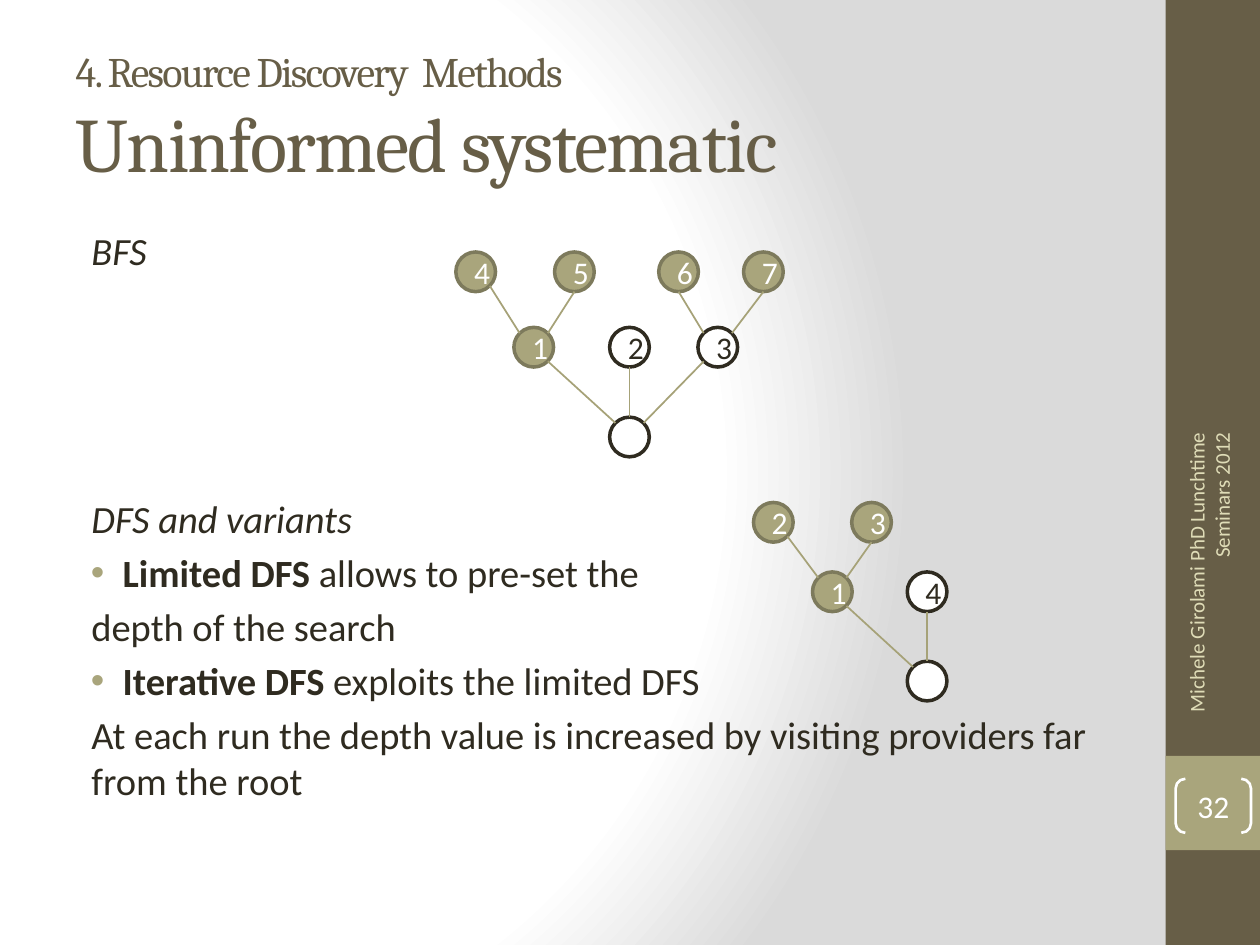
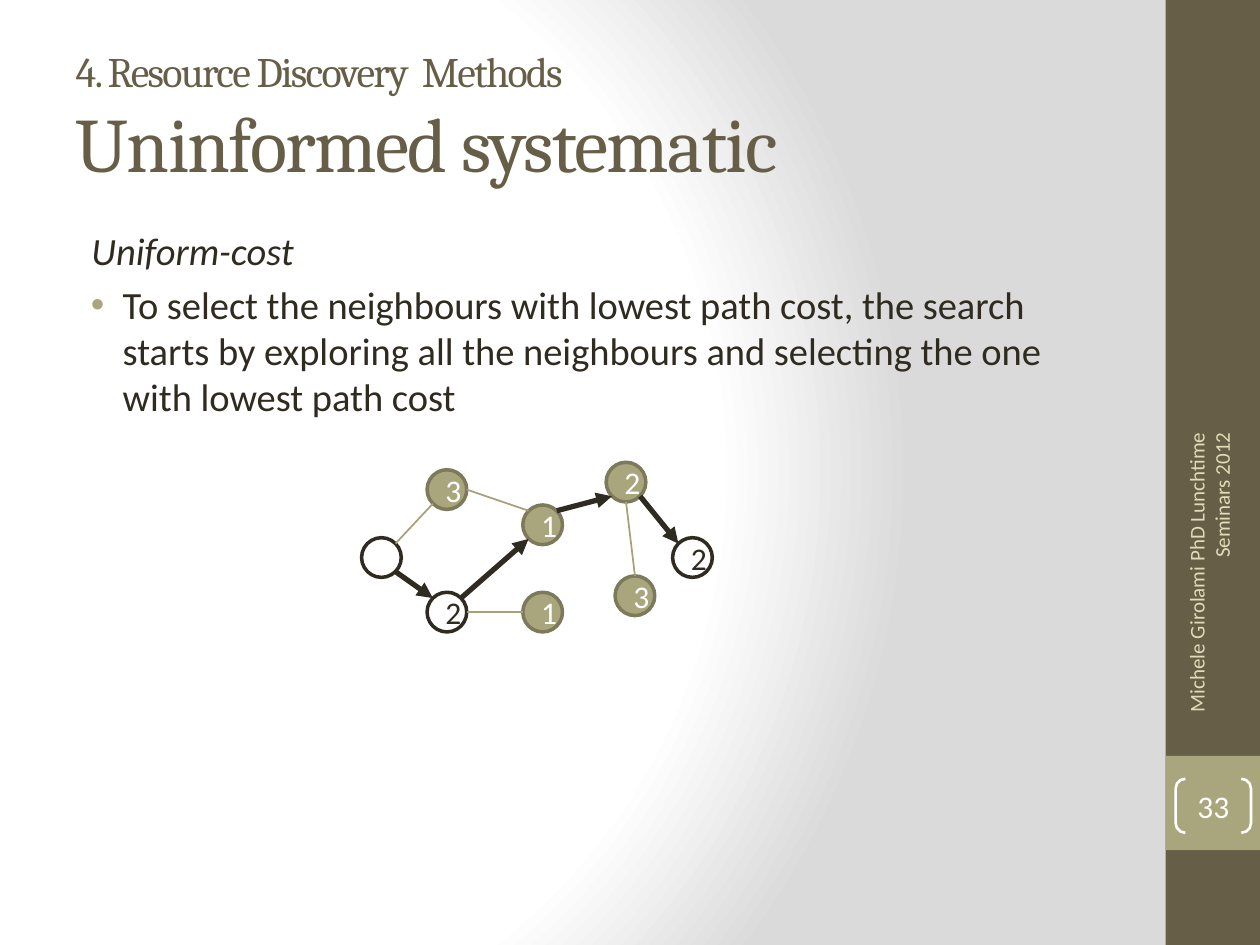
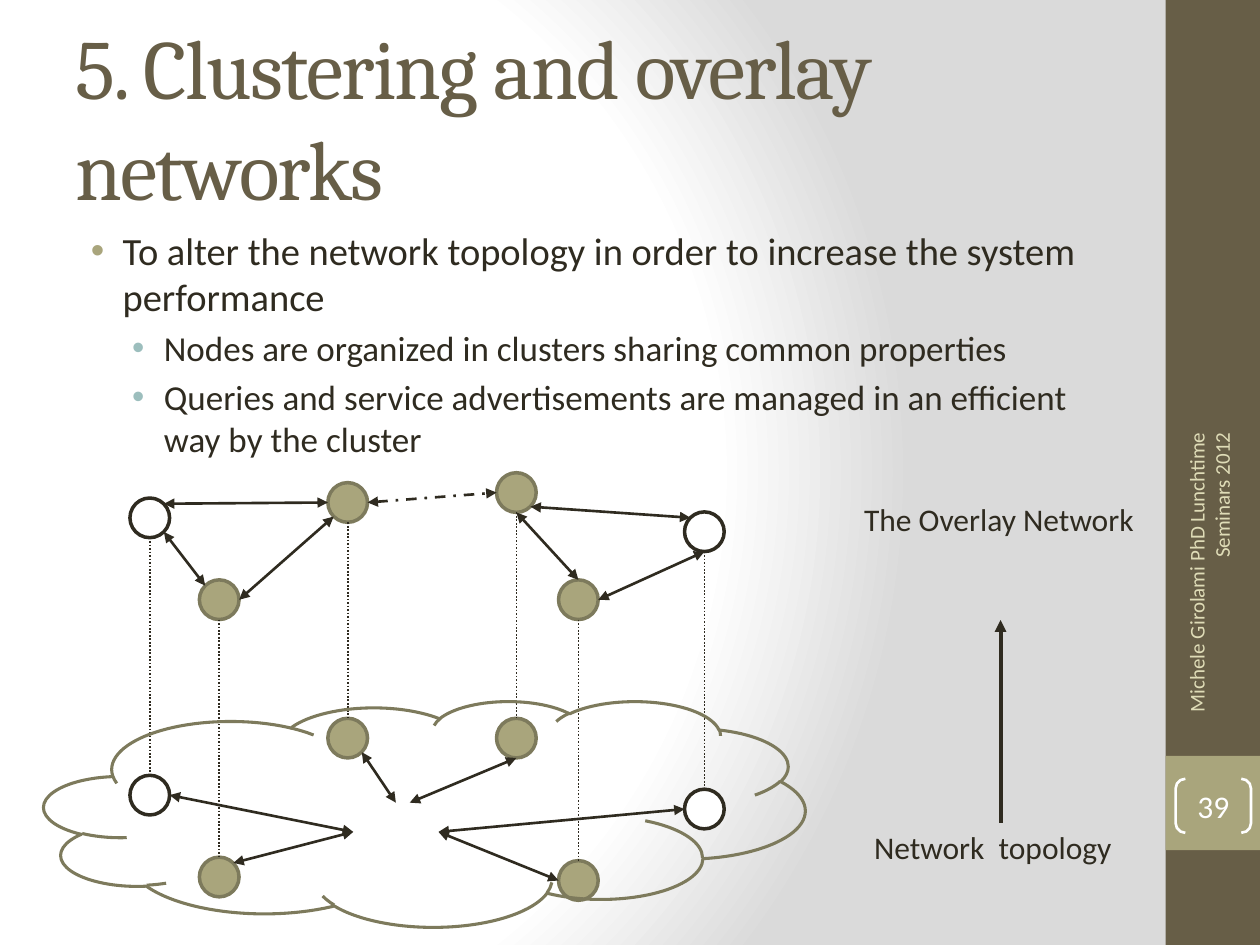
from lxml import etree
from pptx import Presentation
from pptx.dml.color import RGBColor
from pptx.enum import dml, shapes, text
from pptx.oxml import parse_xml
from pptx.oxml.ns import nsdecls, qn
from pptx.util import Cm, Pt

COLORS = {
    "band": "675E47", "accent": "A9A57C", "accent_edge": "7D7A5C", "link": "A6A278",
    "ink": "2F2B20", "paper": "FFFFFF", "shade": "DADADA", "footer": "DFDCB7",
    "sub_bullet": "9CBEBD",
}
HEADING_FONT, BODY_FONT = "Cambria", "Calibri"
FOOTER = "Michele Girolami PhD Lunchtime Seminars 2012"
NODE = 0.8  # node diameter in cm
DIAGONAL = 0.71
SIDES = {
    "N": (0, -1), "E": (1, 0), "S": (0, 1), "W": (-1, 0),
    "NE": (DIAGONAL, -DIAGONAL), "SE": (DIAGONAL, DIAGONAL),
    "SW": (-DIAGONAL, DIAGONAL), "NW": (-DIAGONAL, -DIAGONAL),
}
LINK = {"color": "link", "width": 1}
ROUTE = {"color": "ink", "width": 3, "tail": True}
EXCHANGE = {"color": "ink", "width": 1.5, "head": True, "tail": True}
PROJECTION = {"color": "ink", "width": 1, "dash": dml.MSO_LINE.ROUND_DOT}
BRIDGE = {**EXCHANGE, "dash": dml.MSO_LINE.DASH_DOT}


def rgb(name):
    return RGBColor.from_string(COLORS[name])


def box_cm(box):
    return [Cm(length) for length in box]


def style_run(run, size, color, font=BODY_FONT):
    run.font.size, run.font.name = Pt(size), font
    run.font.color.rgb = rgb(color)


def set_line_text(shape, content, size, color, align):
    paragraph = shape.text_frame.paragraphs[0]
    paragraph.text = content
    paragraph.alignment = align
    style_run(paragraph.runs[0], size, color)


def add_shape(slide, kind, box, fill=None, edge=None, width=1):
    shape = slide.shapes.add_shape(kind, *box_cm(box))
    shape.shadow.inherit = False
    if fill:
        shape.fill.solid()
        shape.fill.fore_color.rgb = rgb(fill)
    else:
        shape.fill.background()
    if edge:
        shape.line.color.rgb = rgb(edge)
        shape.line.width = Pt(width)
    else:
        shape.line.fill.background()
    return shape


def add_line(slide, start, end, color, width, head=False, tail=False, dash=None):
    connector = slide.shapes.add_connector(
        shapes.MSO_CONNECTOR.STRAIGHT, *box_cm((*start, *end)))
    connector.line.color.rgb = rgb(color)
    connector.line.width = Pt(width)
    if dash:
        connector.line.dash_style = dash
    properties = connector._element.spPr
    outline = properties.find(qn("a:ln"))
    for tag, wanted in (("a:headEnd", head), ("a:tailEnd", tail)):
        if wanted:
            etree.SubElement(outline, qn(tag), type="triangle")
    etree.SubElement(properties, qn("a:effectLst"))


def set_background(master):
    """Give every slide the radial white-to-grey background."""
    master.background.fill.solid()
    properties = master._element.cSld.find(qn("p:bg")).find(qn("p:bgPr"))
    stops = "".join(
        f'<a:gs pos="{position}000"><a:srgbClr val="{COLORS[name]}"/></a:gs>'
        for position, name in ((0, "paper"), (75, "paper"), (100, "shade")))
    gradient = parse_xml(
        f'<a:gradFill {nsdecls("a")} rotWithShape="1"><a:gsLst>{stops}</a:gsLst>'
        '<a:path path="circle"><a:fillToRect l="20000" t="50000" r="100000" b="50000"/>'
        '</a:path></a:gradFill>')
    properties.replace(properties.find(qn("a:solidFill")), gradient)


def add_side_band(slide, number, left=23.5, width=1.9):
    rectangle = shapes.MSO_SHAPE.RECTANGLE
    add_shape(slide, rectangle, (left, 0, width, 19.05), "band")
    add_shape(slide, rectangle, (left, 15.24, width, width), "accent")

    footer = slide.shapes.add_textbox(*box_cm((left - 2.42, 11.25, 6.58, 1.02)))
    footer.rotation = 270
    footer.text_frame.word_wrap = True
    footer.text_frame.vertical_anchor = text.MSO_ANCHOR.MIDDLE
    set_line_text(footer, FOOTER, 12, "footer", text.PP_ALIGN.RIGHT)

    bracket = add_shape(slide, shapes.MSO_SHAPE.DOUBLE_BRACKET,
                        (left + 0.2, 15.7, 1.52, 1.09), edge="paper", width=1.5)
    bracket.adjustments[0] = 0.18
    frame = bracket.text_frame
    frame.margin_left = frame.margin_top = frame.margin_right = frame.margin_bottom = 0
    set_line_text(bracket, str(number), 18, "paper", text.PP_ALIGN.CENTER)


def place_placeholder(placeholder, box, anchor):
    placeholder.left, placeholder.top, placeholder.width, placeholder.height = box_cm(box)
    frame = placeholder.text_frame
    frame.auto_size = text.MSO_AUTO_SIZE.NONE
    frame.vertical_anchor = anchor
    return frame


def fill_title(slide, lines):
    """Write the title from (text, size) lines."""
    frame = place_placeholder(slide.shapes.title, (1.27, 0.76, 21.16, 3.18),
                              text.MSO_ANCHOR.MIDDLE)
    frame.text = "\n".join(line for line, _ in lines)
    for paragraph, (_, size) in zip(frame.paragraphs, lines):
        paragraph.alignment = text.PP_ALIGN.LEFT
        run = paragraph.runs[0]
        style_run(run, size, "band", HEADING_FONT)
        run._r.get_or_add_rPr().set("spc", "-100")


def set_bullet(paragraph, style):
    indent, hanging, color = {
        "plain": (0.32, 0, None),
        "italic": (0.32, 0, None),
        "bullet": (0.95, -0.64, "accent"),
        "sub": (1.78, -0.64, "sub_bullet"),
    }[style]
    properties = paragraph._p.get_or_add_pPr()
    properties.set("marL", str(Cm(indent)))
    properties.set("indent", str(Cm(hanging)))
    if not color:
        etree.SubElement(properties, qn("a:buNone"))
        return
    bullet_color = etree.SubElement(properties, qn("a:buClr"))
    etree.SubElement(bullet_color, qn("a:srgbClr"), val=COLORS[color])
    etree.SubElement(properties, qn("a:buFont"), typeface="Arial")
    etree.SubElement(properties, qn("a:buChar"), char="•")


def fill_body(slide, items):
    """Write (style, bold lead, rest, optional space before) items."""
    frame = place_placeholder(slide.placeholders[1], (1.27, 4.45, 21.16, 13.33),
                              text.MSO_ANCHOR.TOP)
    for index, (style, lead, rest, *space) in enumerate(items):
        paragraph = frame.paragraphs[0] if index == 0 else frame.add_paragraph()
        size = 20 if style == "sub" else 22
        paragraph.level = int(style == "sub")
        paragraph.space_before = Pt(space[0] if space else size * 0.2)
        set_bullet(paragraph, style)
        for content, bold in ((lead, True), (rest, False)):
            if content:
                run = paragraph.add_run()
                run.text = content
                style_run(run, size, "ink")
                run.font.bold = bold
                run.font.italic = style == "italic"


def add_nodes(slide, origin, nodes):
    """Draw name: (x, y, label, filled) circles and return their centres."""
    centres = {}
    for name, (x, y, label, filled) in nodes.items():
        left, top = origin[0] + x, origin[1] + y
        fill, edge, ink = (("accent", "accent_edge", "paper") if filled
                           else ("paper", "ink", "ink"))
        node = add_shape(slide, shapes.MSO_SHAPE.OVAL, (left, top, NODE, NODE),
                         fill, edge, 2)
        if label:
            set_line_text(node, label, 18, ink, text.PP_ALIGN.CENTER)
        centres[name] = (left + NODE / 2, top + NODE / 2)
    return centres


def rim(centre, side):
    return tuple(c + NODE / 2 * step for c, step in zip(centre, SIDES[side]))


def add_edges(slide, centres, edges, style):
    for start, start_side, end, end_side in edges:
        add_line(slide, rim(centres[start], start_side), rim(centres[end], end_side), **style)


def add_graph(slide, origin, nodes, edges):
    add_edges(slide, add_nodes(slide, origin, nodes), edges, LINK)


def add_breadth_first_tree(slide, origin):
    leaf_y, child_y = 0, 1.52
    nodes = {
        "1": (1.17, child_y, "1", True), "root": (3.1, 3.33, "", False),
        "4": (0, leaf_y, "4", True), "3": (4.88, child_y, "3", False),
        "2": (3.1, child_y, "2", False), "5": (1.99, leaf_y, "5", True),
        "6": (4.09, leaf_y, "6", True), "7": (5.8, leaf_y, "7", True),
    }
    add_graph(slide, origin, nodes, [
        ("1", "SE", "root", "NW"), ("2", "S", "root", "N"), ("3", "SW", "root", "NE"),
        ("4", "SE", "1", "NW"), ("5", "S", "1", "NE"),
        ("6", "S", "3", "NW"), ("7", "S", "3", "NE")])


def add_depth_first_tree(slide, origin):
    nodes = {
        "1": (1.19, 1.4, "1", True), "root": (3.1, 3.2, "", False),
        "2": (0, 0, "2", True), "3": (1.98, 0, "3", True), "4": (3.1, 1.4, "4", False),
    }
    add_graph(slide, origin, nodes, [
        ("1", "SE", "root", "NW"), ("2", "SE", "1", "NW"),
        ("3", "S", "1", "NE"), ("4", "S", "root", "N")])


def add_cost_graph(slide, origin):
    nodes = {
        "dead end": (3.25, 2.62, "1", True), "start": (0, 1.52, "", False),
        "upper": (1.32, 0.15, "3", True), "goal": (6.27, 1.52, "2", False),
        "lower": (1.32, 2.62, "2", False), "branch": (5.11, 2.29, "3", True),
        "middle": (3.25, 0.86, "1", True), "top": (4.93, 0, "2", True),
    }
    centres = add_nodes(slide, origin, nodes)
    add_edges(slide, centres, [
        ("upper", "E", "middle", "NW"), ("lower", "E", "dead end", "W"),
        ("upper", "SW", "start", "NE"), ("branch", "N", "top", "S")], LINK)
    add_edges(slide, centres, [
        ("start", "SE", "lower", "NW"), ("lower", "NE", "middle", "SW"),
        ("middle", "NE", "top", "SW"), ("top", "SE", "goal", "NW")], ROUTE)


def add_overlay_diagram(slide, origin):
    """Draw the overlay above the network cloud, with a dotted line per node."""
    # name: (x, overlay y, network y, filled)
    peers = {
        "A": (0, 0.51, 6.1, False), "C": (3.99, 0.2, 4.95, True),
        "B": (1.4, 2.16, 7.75, True), "F": (11.18, 0.79, 6.38, False),
        "D": (7.39, 0, 4.95, True), "E": (8.64, 2.16, 7.82, True),
    }
    overlay, network = (
        add_nodes(slide, origin, {name: (peer[0], peer[row], "", peer[3])
                                  for name, peer in peers.items()})
        for row in (1, 2))

    for name, side, x, y in (("A", "E", 4.5, 7.24), ("B", "NE", 4.5, 7.24),
                             ("C", "SE", 5.36, 6.65), ("D", "S", 5.64, 6.65),
                             ("F", "W", 6.22, 7.24), ("E", "W", 6.22, 7.24)):
        add_line(slide, rim(network[name], side), (origin[0] + x, origin[1] + y), **EXCHANGE)
    add_edges(slide, overlay, [
        ("A", "SE", "B", "NW"), ("A", "NE", "C", "W"), ("B", "E", "C", "SW"),
        ("D", "SE", "F", "NW"), ("D", "S", "E", "N"), ("E", "E", "F", "S")], EXCHANGE)
    for name in peers:
        add_line(slide, rim(overlay[name], "S"), rim(network[name], "N"), **PROJECTION)
    add_edges(slide, overlay, [("C", "E", "D", "W")], BRIDGE)

    add_shape(slide, shapes.MSO_SHAPE.CLOUD,
              (origin[0] - 1.73, origin[1] + 4.6, 15.34, 4.55),
              edge="accent_edge", width=1.75)


def add_layer_legend(slide, left, top):
    for content, x, y, width in (("Network  topology", 0.2, 6.6, 5.36),
                                 ("The Overlay Network", 0, 0, 6)):
        label = slide.shapes.add_textbox(*box_cm((left + x, top + y, width, 1.8)))
        label.text_frame.word_wrap = False
        set_line_text(label, content, 18, "ink", text.PP_ALIGN.LEFT)
    add_line(slide, (left + 3, top + 6.63), (left + 3, top + 2.54),
             color="ink", width=2.25, tail=True)


def add_slide(presentation, number, title, items):
    slide = presentation.slides.add_slide(presentation.slide_layouts[1])
    add_side_band(slide, number)
    fill_title(slide, title)
    fill_body(slide, items)
    return slide


def main():
    presentation = Presentation()
    presentation.slide_width, presentation.slide_height = Cm(25.4), Cm(19.05)
    set_background(presentation.slide_master)
    search_title = [("4. Resource Discovery  Methods", 24), ("Uninformed systematic", 44)]

    slide = add_slide(presentation, 32, search_title, [
        ("italic", "", "BFS"),
        ("italic", "", "DFS and variants", 127),
        ("bullet", "Limited DFS", " allows to pre-set the"),
        ("plain", "", "depth of the search"),
        ("bullet", "Iterative DFS", " exploits the limited DFS"),
        ("plain", "", "At each run the depth value is increased by visiting "
                      "providers far from the root"),
    ])
    add_breadth_first_tree(slide, (9.19, 5.08))
    add_depth_first_tree(slide, (15.19, 10.13))

    slide = add_slide(presentation, 33, search_title, [
        ("italic", "", "Uniform-cost"),
        ("bullet", "", "To select the neighbours with lowest path cost, the search starts "
                       "by exploring all the neighbours and selecting the one with lowest "
                       "path cost"),
    ])
    add_cost_graph(slide, (7.29, 9.32))

    slide = add_slide(presentation, 39, [("5. Clustering and overlay networks", 48)], [
        ("bullet", "", "To alter the network topology in order to increase the system "
                       "performance"),
        ("sub", "", "Nodes are organized in clusters sharing common properties"),
        ("sub", "", "Queries and service advertisements are managed in an efficient way "
                    "by the cluster"),
    ])
    add_overlay_diagram(slide, (2.62, 9.53))
    add_layer_legend(slide, 17.17, 9.96)

    presentation.save("out.pptx")


if __name__ == "__main__":
    main()
